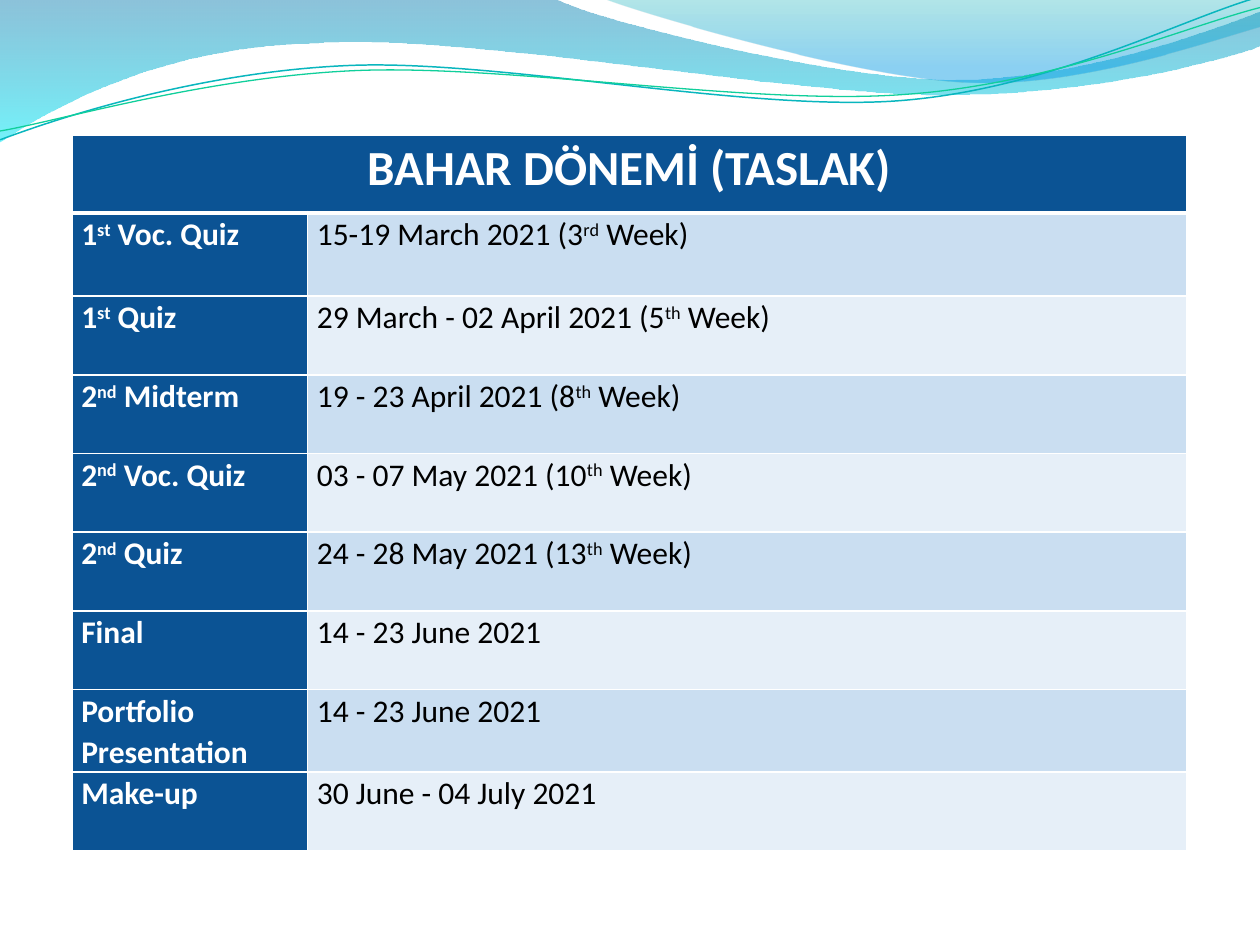
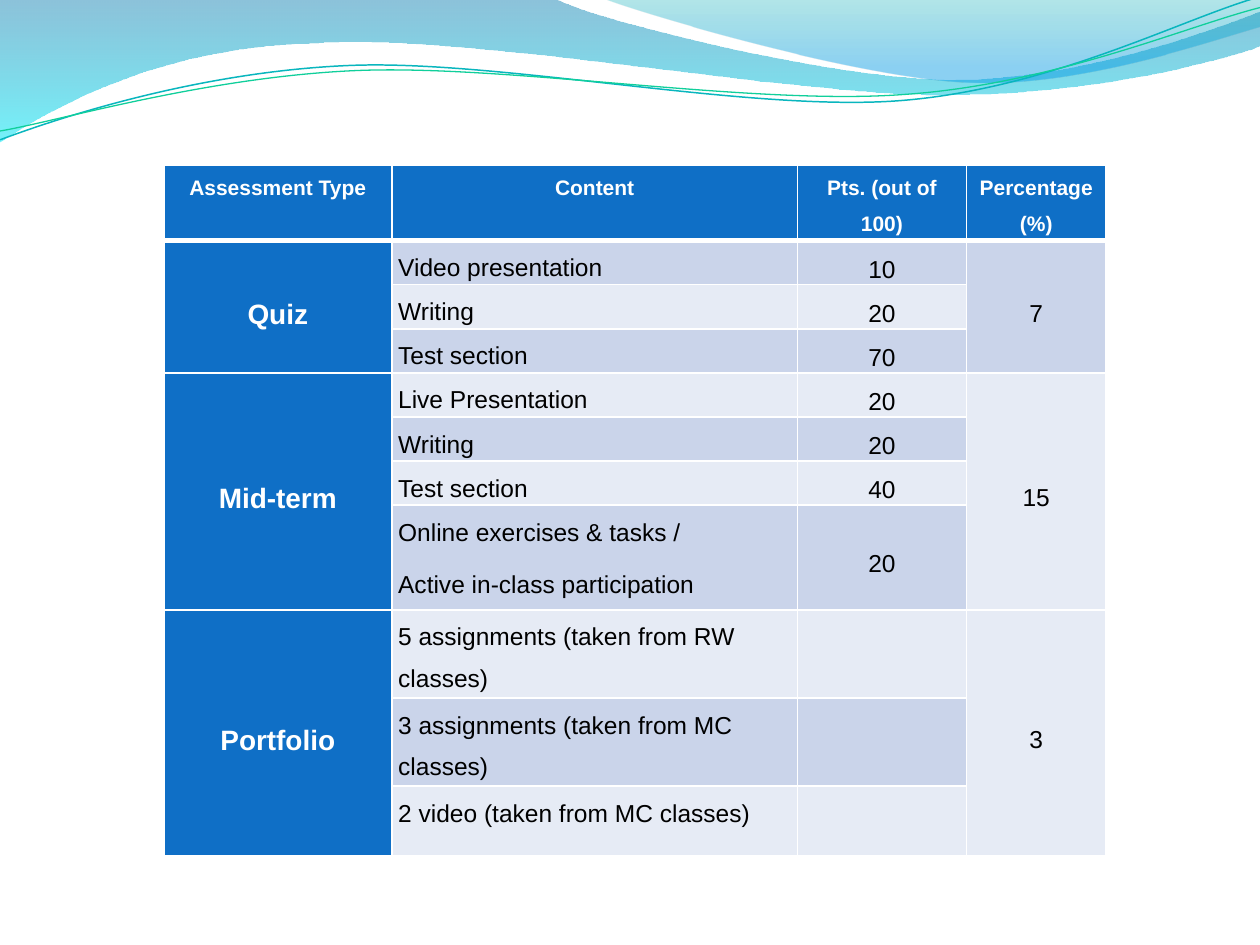
from math import cos, radians, sin

from lxml.etree import SubElement
from pptx import Presentation
from pptx.dml.color import RGBColor
from pptx.enum.text import MSO_ANCHOR, PP_ALIGN
from pptx.oxml.ns import qn
from pptx.util import Inches, Pt

COLORS = {
    "white": "FFFFFF", "black": "000000",
    "navy": "0B5394", "sky": "CADEF1", "pale_sky": "E6EFF8",
    "blue": "0F6FC6", "lilac": "CAD4EA", "pale_lilac": "E6EBF5",
    "deep": "0079AD", "cyan": "00E9F7", "teal": "00ABB4", "azure": "0099E4",
    "teal_line": "09B6BE", "green_line": "10CF9B",
}

# Wave outlines: each step lists one point, or two controls and the end of a curve
LEFT_WAVE = [
    [(0, 0)], [(4.4, -0.01)],
    [(4.76, 0.17), (6.64, 0.63), (7.58, 0.63)],
    [(8.53, 0.63), (9.58, 0.26), (10, 0.09)],
    [(10.01, 0.36)],
    [(9.83, 0.44), (8.7, 0.76), (7.46, 0.75)],
    [(6.22, 0.75), (3.82, 0.28), (2.57, 0.34)],
    [(1.29, 0.36), (0.46, 0.83), (-0.01, 1.13)],
    [(0, 0)],
]
RIGHT_WAVE = [
    [(4.79, -0.01)],
    [(5.09, 0.11), (6.82, 0.62), (7.69, 0.65)],
    [(8.56, 0.69), (9.61, 0.32), (10, 0.21)],
    [(10, 0)], [(4.79, -0.01)],
]
TEAL_CURVE = [
    [(0, 1.11)],
    [(0.48, 0.93), (1.58, 0.57), (2.77, 0.52)],
    [(3.95, 0.47), (5.93, 0.89), (7.13, 0.8)],
    [(8.33, 0.71), (9.38, 0.15), (9.98, -0.02)],
]
GREEN_CURVE = [
    [(0, 1.04)],
    [(0.47, 0.96), (1.64, 0.61), (2.83, 0.56)],
    [(4.03, 0.51), (5.97, 0.84), (7.17, 0.75)],
    [(8.36, 0.67), (9.41, 0.21), (10, 0.06)],
]
CURVE_TILT = -2.7
CURVE_CENTRE = (4.99, 0.58)

# Text between carets is superscript
EXAM_DATES = [
    ("1^st^ Voc. Quiz", "15-19 March 2021 (3^rd^ Week)"),
    ("1^st^ Quiz", "29 March - 02 April 2021 (5^th^ Week)"),
    ("2^nd^ Midterm", "19 - 23 April 2021 (8^th^ Week)"),
    ("2^nd^ Voc. Quiz", "03 - 07 May 2021 (10^th^ Week)"),
    ("2^nd^ Quiz", "24 - 28 May 2021 (13^th^ Week)"),
    ("Final", "14 - 23 June 2021"),
    ("Portfolio Presentation", "14 - 23 June 2021"),
    ("Make-up", "30 June - 04 July 2021"),
]
ASSESSMENT_HEADS = ["Assessment Type", "Content", "Pts. (out of 100)", "Percentage (%)"]
ASSESSMENTS = [
    ("Quiz", "7", [("Video presentation", "10"), ("Writing", "20"),
                   ("Test section", "70")]),
    ("Mid-term", "15", [("Live Presentation", "20"), ("Writing", "20"),
                        ("Test section", "40"),
                        ("Online exercises & tasks /\nActive in-class participation", "20")]),
    ("Portfolio", "3", [("5 assignments (taken from RW classes)", ""),
                        ("3 assignments (taken from MC classes)", ""),
                        ("2 video (taken from MC classes)", "")]),
]


def rgb(name):
    return RGBColor.from_string(COLORS[name])


def level(point):
    """Take the tilt out of a curve's point, as the shape is rotated instead."""
    turn = radians(-CURVE_TILT)
    dx, dy = point[0] - CURVE_CENTRE[0], point[1] - CURVE_CENTRE[1]
    return (CURVE_CENTRE[0] + dx * cos(turn) - dy * sin(turn),
            CURVE_CENTRE[1] + dx * sin(turn) + dy * cos(turn))


def add_outline(s, outline, close):
    """Build the outline through its end points, then bend its curved steps."""
    steps = [[(Inches(x), Inches(y)) for x, y in step] for step in outline]
    builder = s.shapes.build_freeform(*steps[0][0])
    builder.add_line_segments([step[-1] for step in steps[1:]], close=close)
    sp = builder.convert_to_shape()
    lines = list(sp._element.spPr.iter(qn("a:lnTo")))
    for line, step in zip(lines, steps[1:]):
        if len(step) == 3:
            line.tag = qn("a:cubicBezTo")
            line.clear()
            for x, y in step:
                SubElement(line, qn("a:pt"), x=str(x - sp.left), y=str(y - sp.top))
    sp.shadow.inherit = False
    sp.fill.background()
    return sp


def add_wave(s, outline, stops):
    """Add a closed wave with a see-through gradient from top to bottom."""
    sp = add_outline(s, outline, close=True)
    sp.line.fill.background()
    no_fill = sp._element.spPr.find(qn("a:noFill"))
    grad = SubElement(sp._element.spPr, qn("a:gradFill"), rotWithShape="1")
    stop_list = SubElement(grad, qn("a:gsLst"))
    for position, color, opacity in stops:
        stop = SubElement(stop_list, qn("a:gs"), pos=str(position * 1000))
        clr = SubElement(stop, qn("a:srgbClr"), val=COLORS[color])
        SubElement(clr, qn("a:alpha"), val=str(opacity * 1000))
    SubElement(grad, qn("a:lin"), ang="5400000", scaled="0")
    sp._element.spPr.replace(no_fill, grad)
    return sp


def add_curve(s, outline, color, width):
    sp = add_outline(s, [[level(point) for point in step] for step in outline], close=False)
    sp.rotation = CURVE_TILT
    sp.line.color.rgb = rgb(color)
    sp.line.width = Pt(width)
    return sp


def add_master_waves(prs, s):
    """Draw the waves and hand them to the master, behind everything."""
    waves = [
        add_wave(s, LEFT_WAVE, [(0, "deep", 45), (100, "cyan", 55)]),
        add_wave(s, RIGHT_WAVE, [(0, "teal", 30), (80, "azure", 45), (100, "azure", 45)]),
        add_curve(s, TEAL_CURVE, "teal_line", 0.85),
        add_curve(s, GREEN_CURVE, "green_line", 0.75),
    ]
    tree = prs.slide_master.shapes._spTree
    for i, sp in enumerate(waves):
        sp._element.nvSpPr.cNvPr.set("id", str(101 + i))
        tree.insert(2 + i, sp._element)


def set_borders(cell, top=1, bottom=1):
    tcPr = cell._tc.get_or_add_tcPr()
    for side, width in (("L", 1), ("R", 1), ("T", top), ("B", bottom)):
        ln = SubElement(tcPr, qn(f"a:ln{side}"), w=str(Pt(width)))
        fill = SubElement(ln, qn("a:solidFill"))
        SubElement(fill, qn("a:srgbClr"), val=COLORS["white"])


def add_table(s, left, top, widths, heights):
    shape = s.shapes.add_table(len(heights), len(widths), Inches(left), Inches(top),
                               Inches(sum(widths)), Inches(sum(heights)))
    table = shape.table
    table.horz_banding = False
    for column, width in zip(table.columns, widths):
        column.width = Inches(width)
    for i, (row, height) in enumerate(zip(table.rows, heights)):
        row.height = Inches(height)
        for cell in row.cells:
            set_borders(cell, top=3 if i == 1 else 1, bottom=3 if i == 0 else 1)
    return table


def write_cell(cell, text, fill, style, size, color="black", bold=False,
               align=PP_ALIGN.LEFT, anchor=MSO_ANCHOR.TOP):
    cell.fill.solid()
    cell.fill.fore_color.rgb = rgb(fill)
    if not text:
        return
    layout = {"margin_left": Pt(style["inset"]), "margin_right": Pt(style["inset"]),
              "margin_top": 0, "margin_bottom": 0, "vertical_anchor": anchor}
    for name, value in layout.items():
        setattr(cell, name, value)
    font = {"name": style["font"], "size": Pt(size), "bold": bold}
    tf = cell.text_frame
    for i, line in enumerate(text.split("\n")):
        p = tf.add_paragraph() if i else tf.paragraphs[0]
        p.alignment = align
        p.line_spacing = style["spacing"]
        if i:
            p.space_before = Pt(6)
        for j, piece in enumerate(line.split("^")):
            r = p.add_run()
            r.text = piece
            for name, value in font.items():
                setattr(r.font, name, value)
            r.font.color.rgb = rgb(color)
            if j % 2:
                r.font._element.set("baseline", "30000")


def add_exam_dates(s):
    style = {"font": "Calibri", "inset": 5.4, "spacing": 1.07}
    strong = {"fill": "navy", "style": style, "color": "white", "bold": True}
    table = add_table(s, 0.57, 1.07, [1.87, 6.98], [0.62, 0.66] + [5 / 8] * 7)
    table.cell(0, 0).merge(table.cell(0, 1))
    write_cell(table.cell(0, 0), "BAHAR DÖNEMİ (TASLAK)", size=28,
               align=PP_ALIGN.CENTER, **strong)
    for row, (exam, date) in enumerate(EXAM_DATES, 1):
        write_cell(table.cell(row, 0), exam, size=18, **strong)
        write_cell(table.cell(row, 1), date, "sky" if row % 2 else "pale_sky", style, 18)


def add_assessments(s):
    style = {"font": "Arial", "inset": 3.6, "spacing": 1.5}
    strong = {"fill": "blue", "style": style, "color": "white", "bold": True,
              "align": PP_ALIGN.CENTER}
    middle = {"align": PP_ALIGN.CENTER, "anchor": MSO_ANCHOR.MIDDLE}
    heights = [0.6] + [0.35] * 6 + [0.83, 0.7, 0.7, 0.55]
    table = add_table(s, 1.3, 1.31, [1.81, 3.22, 1.34, 1.11], heights)
    for column, head in enumerate(ASSESSMENT_HEADS):
        write_cell(table.cell(0, column), head, size=12, **strong)
    first = 1
    for kind, percentage, parts in ASSESSMENTS:
        last = first + len(parts) - 1
        for column in (0, 3):
            table.cell(first, column).merge(table.cell(last, column))
        write_cell(table.cell(first, 0), kind, size=16, anchor=MSO_ANCHOR.MIDDLE, **strong)
        for row, (content, points) in enumerate(parts, first):
            band = "lilac" if row % 2 else "pale_lilac"
            write_cell(table.cell(row, 1), content, band, style, 14)
            write_cell(table.cell(row, 2), points, band, style, 14, **middle)
            if row == first:
                write_cell(table.cell(row, 3), percentage, band, style, 14, **middle)
        first = last + 1


def main():
    prs = Presentation()
    prs.slide_width, prs.slide_height = Inches(10), Inches(7.5)
    blank = prs.slide_layouts[6]

    # Spring term exam dates
    s = prs.slides.add_slide(blank)
    add_master_waves(prs, s)
    add_exam_dates(s)

    # Assessment weights
    s = prs.slides.add_slide(blank)
    add_assessments(s)

    prs.save("out.pptx")


if __name__ == "__main__":
    main()
